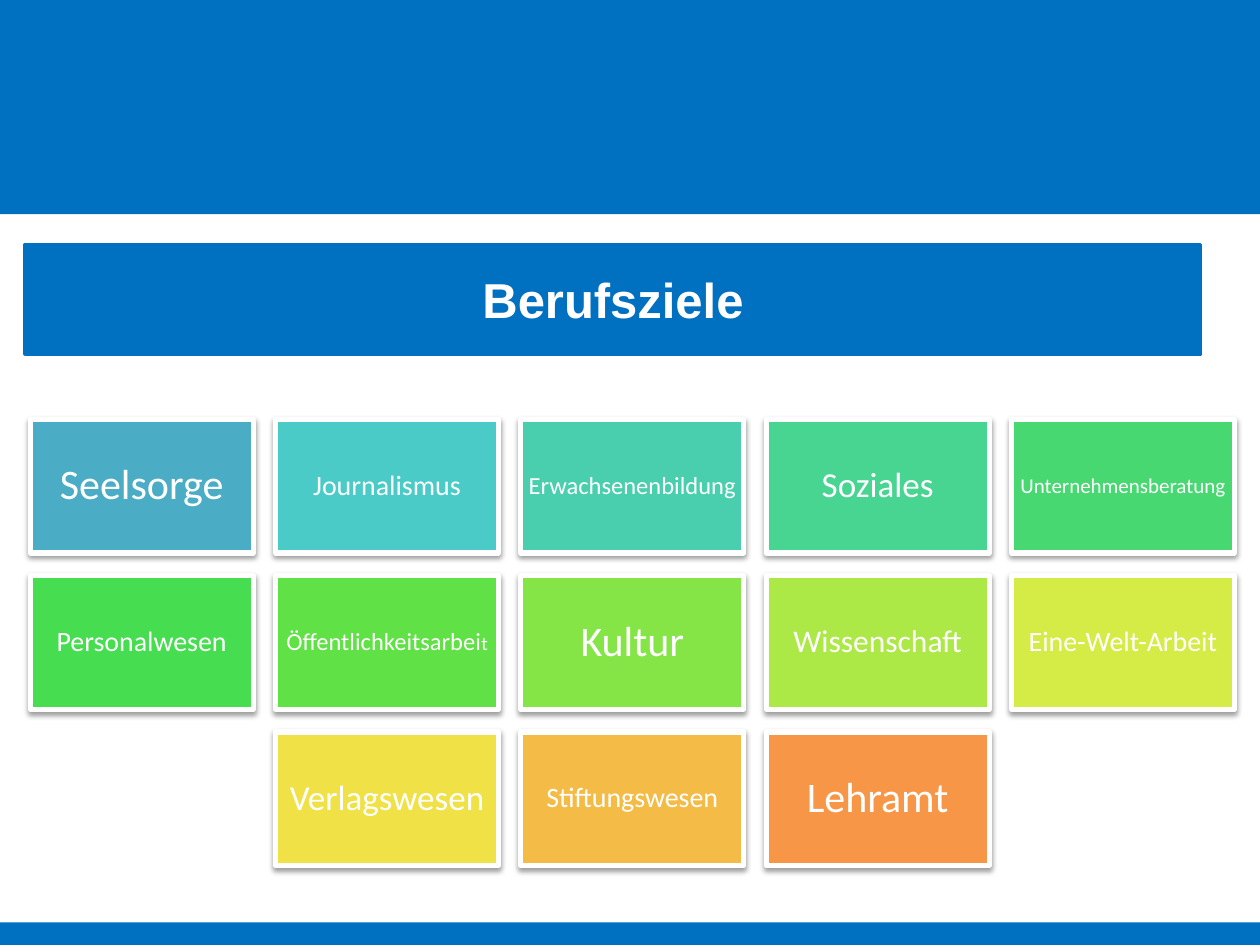
import pptx
import pptx.dml.color
import pptx.enum.shapes
import pptx.enum.text
import pptx.util
from lxml import etree

WIDTH, HEIGHT = 10, 7.5
LEFT, TOP = 0.24, 3.33
STEP_X, STEP_Y = 1.947, 1.24
TILE_W, TILE_H = 1.77, 1.06
BLUE, WHITE = "0070C0", "FFFFFF"
DRAWING = "http://schemas.openxmlformats.org/drawingml/2006/main"

ROWS = [
    (0, [("Seelsorge", 24, "4BACC6"), ("Journalismus", 16, "4ACBC8"),
         ("Erwachsenenbildung", 14, "49CFAE"), ("Soziales", 20, "48D491"),
         ("Unternehmensberatung", 12, "47D872")]),
    (0, [("Personalwesen", 16, "47DD50"), ("Öffentlichkeitsarbei", 14, "60E146"),
         ("Kultur", 24, "85E546"), ("Wissenschaft", 18, "ACE946"),
         ("Eine-Welt-Arbeit", 16, "D5EC46")]),
    (1, [("Verlagswesen", 20, "F0E146"), ("Stiftungswesen", 16, "F4BC46"),
         ("Lehramt", 24, "F79646")]),
]


def paint(form, code):
    """Give a fill or line format a solid colour from a hex string."""
    form.solid()
    form.fore_color.rgb = pptx.dml.color.RGBColor.from_string(code)


def add_box(slide, place, fill, line=None, width=0):
    """Add a flat rectangle at left, top, width and height in inches."""
    kind = pptx.enum.shapes.MSO_SHAPE.RECTANGLE
    box = slide.shapes.add_shape(kind, *[pptx.util.Inches(n) for n in place])
    box.shadow.inherit = False
    paint(box.fill, fill)
    if line:
        paint(box.line.fill, line)
        box.line.width = pptx.util.Pt(width)
    else:
        box.line.fill.background()
    return box


def style(run, face, size, bold=False):
    """Set the face, size, weight and white colour of a run."""
    run.font.name = face
    run.font.size = pptx.util.Pt(size)
    run.font.bold = bold
    paint(run.font.fill, WHITE)


def write(box, text, face, size, bold=False):
    """Centre one line of text in a box and return its paragraph."""
    frame = box.text_frame
    frame.text = text
    frame.word_wrap = True
    frame.vertical_anchor = pptx.enum.text.MSO_ANCHOR.MIDDLE
    para = frame.paragraphs[0]
    para.alignment = pptx.enum.text.PP_ALIGN.CENTER
    style(para.runs[0], face, size, bold)
    return para


def add_shade(box):
    """Put a soft black shadow below a box."""
    effects = box._element.spPr.find(f"{{{DRAWING}}}effectLst")
    shade = etree.SubElement(
        effects, f"{{{DRAWING}}}outerShdw", dir="5400000", rotWithShape="0",
        blurRad=str(pptx.util.Pt(3.1)), dist=str(pptx.util.Pt(1.6)))
    tone = etree.SubElement(shade, f"{{{DRAWING}}}srgbClr", val="000000")
    etree.SubElement(tone, f"{{{DRAWING}}}alpha", val="38000")


def add_tile(slide, col, row, text, size, fill):
    """Add a labelled tile at a column and row of the grid."""
    place = LEFT + col * STEP_X, TOP + row * STEP_Y, TILE_W, TILE_H
    box = add_box(slide, place, fill, WHITE, 3)
    add_shade(box)
    para = write(box, text, "Calibri", size)
    para.line_spacing = 0.9
    frame = box.text_frame
    inset = pptx.util.Inches(size / 240)
    frame.margin_left = frame.margin_right = inset
    frame.margin_top = frame.margin_bottom = inset
    return para


def main():
    """Build the slide and save it."""
    deck = pptx.Presentation()
    deck.slide_width = pptx.util.Inches(WIDTH)
    deck.slide_height = pptx.util.Inches(HEIGHT)
    slide = deck.slides.add_slide(deck.slide_layouts[6])
    add_box(slide, (0, 0, WIDTH, 1.7), BLUE)
    add_box(slide, (0, 7.32, WIDTH, 0.18), BLUE)
    for row, (start, tiles) in enumerate(ROWS):
        for col, (text, size, fill) in enumerate(tiles, start):
            para = add_tile(slide, col, row, text, size, fill)
            if text == "Öffentlichkeitsarbei":
                tail = para.add_run()
                tail.text = "t"
                style(tail, "Calibri", 11)
    title = add_box(slide, (0.2, 1.94, 9.33, 0.87), BLUE, BLUE, 2)
    write(title, "Berufsziele", "Arial", 28, True)
    deck.save("out.pptx")


if __name__ == "__main__":
    main()
